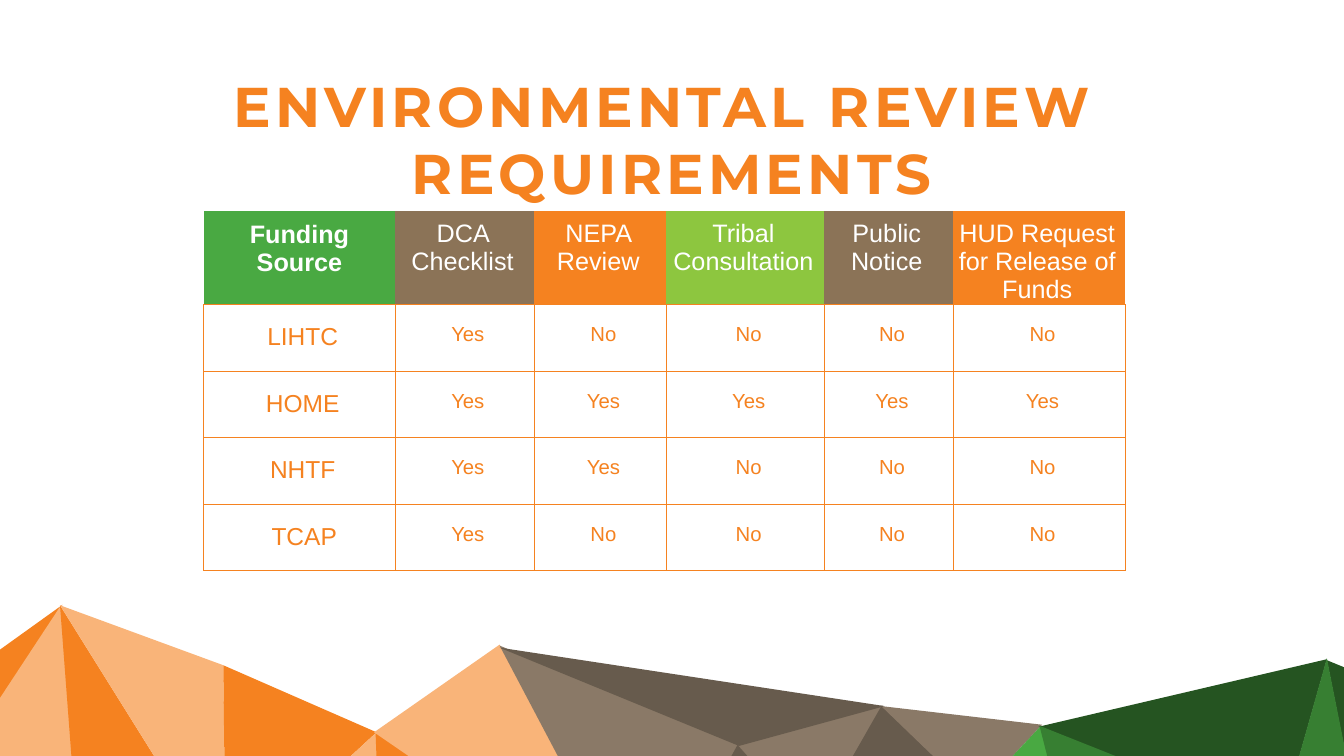
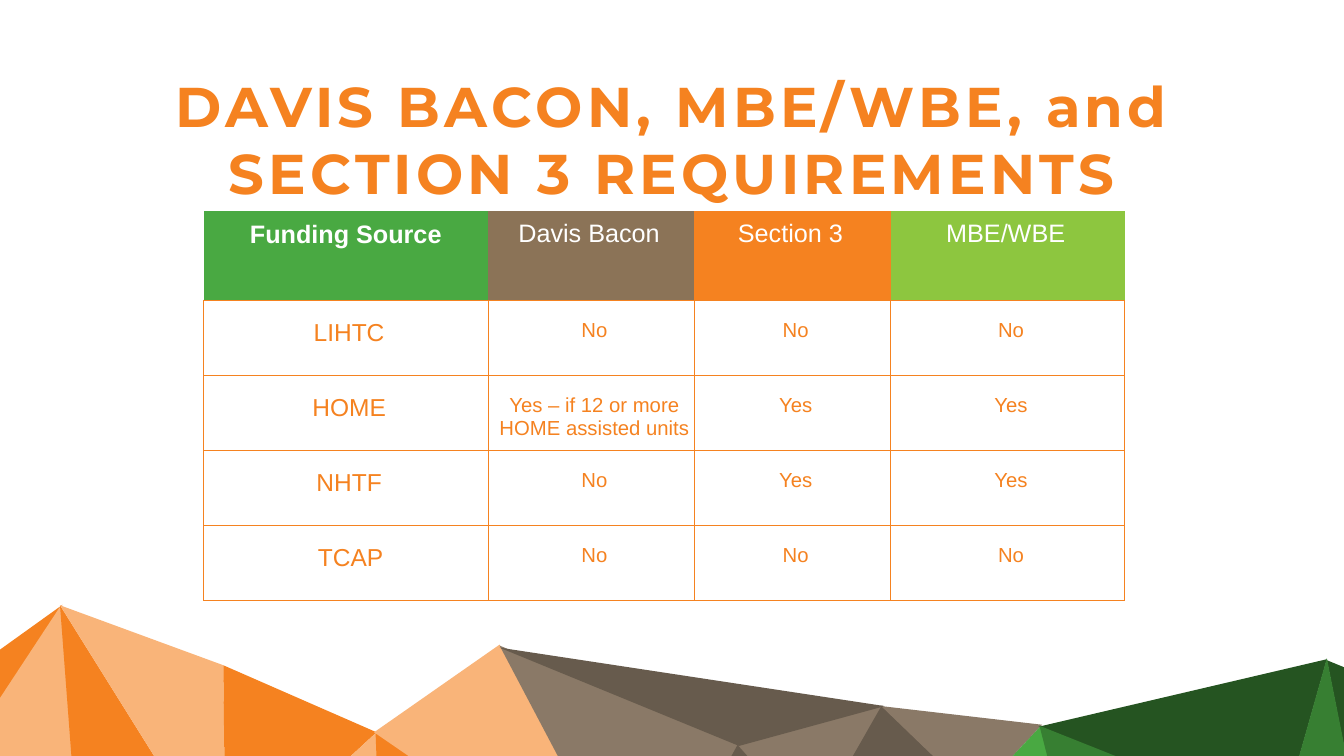
from dataclasses import dataclass

from lxml import etree
from pptx import Presentation
from pptx.dml.color import RGBColor
from pptx.enum.text import MSO_ANCHOR, MSO_AUTO_SIZE, PP_ALIGN
from pptx.oxml.ns import qn
from pptx.util import Inches, Pt

CENTER = PP_ALIGN.CENTER
TOP = MSO_ANCHOR.TOP
GROW = MSO_AUTO_SIZE.SHAPE_TO_FIT_TEXT

WIDTH, HEIGHT = 26.66, 15
TABLE_LEFT, TABLE_TOP = 4.04, 4.19
TITLE_TOP, TITLE_HEIGHT = 1.36, 2.79

COLORS = {
    "orange": "F58220",
    "peach": "F9B479",
    "taupe": "8A7967",
    "umber": "675B4D",
    "green": "49A942",
    "forest": "255421",
    "leaf": "377F32",
    "brown": "8B7357",
    "lime": "8DC63F",
    "white": "FFFFFF",
}

HEAD_FILLS = ["green", "brown", "orange", "lime", "brown", "orange"]

HEAD_FIRST = (0, 0.19, 0, 0)
HEAD_REST = (0, 0.16, 0.08, 0)
BODY = (0.21, 0.38, 0.08, 0.04)
BODY_LAST = (0.19, 0.38, 0, 0.04)


@dataclass
class Facet:
    color: str
    points: list[tuple[float, float]]


@dataclass
class Page:
    title: list[str]
    width: float
    cols: list[float]
    head: float
    row: float
    cells: list[list[str]]


@dataclass
class Style:
    size: float
    color: str
    bold: bool = False
    font: str = "Arial"


FACETS = [
    Facet("orange", [(1.24, 12), (0, 12.89), (0, 13.88)]),
    Facet("peach", [(1.57, 16.64), (1.21, 12.01), (-0.02, 13.88), (-0.02, 16.64)]),
    Facet("orange", [(4.08, 16.64), (1.19, 12.01), (1.54, 16.64)]),
    Facet("peach", [(4.47, 16.64), (4.43, 13.2), (1.19, 12.01), (4.08, 16.64)]),
    Facet("orange", [(5.18, 16.64), (7.47, 14.53), (4.43, 13.2), (4.47, 16.64)]),
    Facet("peach", [(7.55, 16.64), (7.47, 14.53), (5.18, 16.64)]),
    Facet("orange", [(10.52, 16.64), (7.45, 14.53), (7.53, 16.64)]),
    Facet("peach", [(11.94, 16.64), (9.91, 12.79), (7.42, 14.53), (10.49, 16.64)]),
    Facet("taupe", [(13.62, 16.66), (14.66, 14.76), (9.91, 12.81), (11.94, 16.66)]),
    Facet("taupe", [(14.61, 14.79), (16.1, 16.47), (17.51, 14)]),
    Facet("umber", [(16.08, 16.47), (19.35, 15.8), (17.49, 14)]),
    Facet("taupe", [(17.48, 14.01), (19.34, 15.8), (20.67, 14.38)]),
    Facet("green", [(21.24, 16.71), (20.65, 14.4), (19.31, 15.83), (20.28, 16.71)]),
    Facet("forest", [(20.6, 14.42), (25.4, 16.33), (26.32, 13.08)]),
    Facet("leaf", [(24.41, 16.71), (25.42, 16.31), (20.62, 14.4), (21.21, 16.71)]),
    Facet("forest", [(26.81, 13.3), (26.32, 13.1), (26.81, 15.57)]),
    Facet("leaf", [(26.81, 16.71), (26.81, 15.52), (26.32, 13.06), (25.4, 16.31), (26, 16.71)]),
    Facet("umber", [(9.91, 12.85), (17.55, 14.01), (14.66, 14.8)]),
    Facet("umber", [(15.71, 16.68), (16.12, 16.46), (14.63, 14.78), (13.59, 16.68)]),
]

PAGES = [
    Page(
        ["ENVIRONMENTAL REVIEW ", "REQUIREMENTS"],
        18.58,
        [3.8, 2.75, 2.63, 3.13, 2.56, 3.41],
        1.85,
        1.32,
        [
            ["Funding Source", "DCA Checklist", "NEPA Review", "Tribal Consultation",
             "Public Notice", "HUD Request for Release of Funds"],
            ["LIHTC", "Yes", "No", "No", "No", "No"],
            ["HOME", "Yes", "Yes", "Yes", "Yes", "Yes"],
            ["NHTF", "Yes", "Yes", "No", "No", "No"],
            ["TCAP", "Yes", "No", "No", "No", "No"],
        ],
    ),
    Page(
        ["DAVIS BACON, MBE/WBE, and", "SECTION 3 REQUIREMENTS"],
        20.94,
        [5.64, 4.09, 3.9, 4.64],
        1.76,
        1.49,
        [
            ["Funding Source", "Davis Bacon", "Section 3", "MBE/WBE"],
            ["LIHTC", "No", "No", "No"],
            ["HOME", "Yes – if 12 or more HOME assisted units", "Yes", "Yes"],
            ["NHTF", "No", "Yes", "Yes"],
            ["TCAP", "No", "No", "No"],
        ],
    ),
]


def rgb(name: str) -> RGBColor:
    return RGBColor.from_string(COLORS[name])


def format_text(frame, style: Style) -> None:
    for para in frame.paragraphs:
        para.alignment = CENTER
        for run in para.runs:
            font = run.font
            font.name = style.font
            font.size = Pt(style.size)
            font.bold = style.bold
            font.color.rgb = rgb(style.color)


def draw_range(slide, master) -> None:
    group = slide.shapes.add_group_shape()
    for facet in FACETS:
        spots = [(Inches(x), Inches(y)) for x, y in facet.points]
        pen = group.shapes.build_freeform(*spots[0])
        pen.add_line_segments(spots[1:], close=True)
        shape = pen.convert_to_shape()
        shape.shadow.inherit = False
        shape.fill.solid()
        shape.fill.fore_color.rgb = rgb(facet.color)
        shape.line.fill.background()
    tree = master.shapes.element
    tree.append(group.element)
    for num, node in enumerate(tree.iter(qn("p:cNvPr")), 1):
        node.set("id", str(num))


def draw_title(slide, page: Page) -> None:
    title = slide.shapes.title
    title.left = Inches((WIDTH - page.width) / 2)
    title.top = Inches(TITLE_TOP)
    title.width = Inches(page.width)
    title.height = Inches(TITLE_HEIGHT)
    frame = title.text_frame
    frame.text = "\n".join(page.title)
    frame.word_wrap = False
    frame.auto_size = GROW
    frame.vertical_anchor = TOP
    format_text(frame, Style(80, "orange", True, "Montserrat"))
    for para in frame.paragraphs:
        para.line_spacing = 1.0
        para.space_before = Pt(0)
        for run in para.runs:
            run.font.element.set("spc", "600") if hasattr(run.font, "element") else \
                run._r.get_or_add_rPr().set("spc", "600")
    slide.shapes.element.append(title.element)


def set_edges(cell, sides: str) -> None:
    props = cell._tc.get_or_add_tcPr()
    for side in "LRTB":
        line = etree.SubElement(props, qn(f"a:ln{side}"), w=str(Pt(1)))
        if side in sides:
            fill = etree.SubElement(line, qn("a:solidFill"))
            etree.SubElement(fill, qn("a:srgbClr"), val=COLORS["orange"])
        else:
            etree.SubElement(line, qn("a:noFill"))


def fill_cell(cell, text: str, style: Style, fill: str, pads: tuple, sides: str) -> None:
    cell.text_frame.text = text
    format_text(cell.text_frame, style)
    cell.vertical_anchor = TOP
    left, top, right, bottom = map(Inches, pads)
    cell.margin_left, cell.margin_top = left, top
    cell.margin_right, cell.margin_bottom = right, bottom
    set_edges(cell, sides)
    cell.fill.solid()
    cell.fill.fore_color.rgb = rgb(fill)


def draw_table(slide, page: Page) -> None:
    count = len(page.cells)
    heights = [page.head] + [page.row] * (count - 1)
    table = slide.shapes.add_table(
        count, len(page.cols), Inches(TABLE_LEFT), Inches(TABLE_TOP),
        Inches(sum(page.cols)), Inches(sum(heights)),
    ).table
    table.first_row = False
    table.horz_banding = False
    for col, width in zip(table.columns, page.cols):
        col.width = Inches(width)
    for r, (height, texts) in enumerate(zip(heights, page.cells)):
        table.rows[r].height = Inches(height)
        for c, text in enumerate(texts):
            first = c == 0
            if r == 0:
                style = Style(36, "white", first)
                fill, sides = HEAD_FILLS[c], "B"
                pads = HEAD_FIRST if first else HEAD_REST
            else:
                style = Style(35 if first else 29, "orange")
                fill, sides = "white", "LRTB"
                pads = BODY_LAST if first and r == count - 1 else BODY
            fill_cell(table.cell(r, c), text, style, fill, pads, sides)


def main() -> None:
    deck = Presentation()
    deck.slide_width = Inches(WIDTH)
    deck.slide_height = Inches(HEIGHT)
    layout = deck.slide_layouts.get_by_name("Title Only")
    for num, page in enumerate(PAGES):
        slide = deck.slides.add_slide(layout)
        if num == 0:
            draw_range(slide, deck.slide_master)
        draw_table(slide, page)
        draw_title(slide, page)


    deck.save("out.pptx")


if __name__ == "__main__":
    main()
